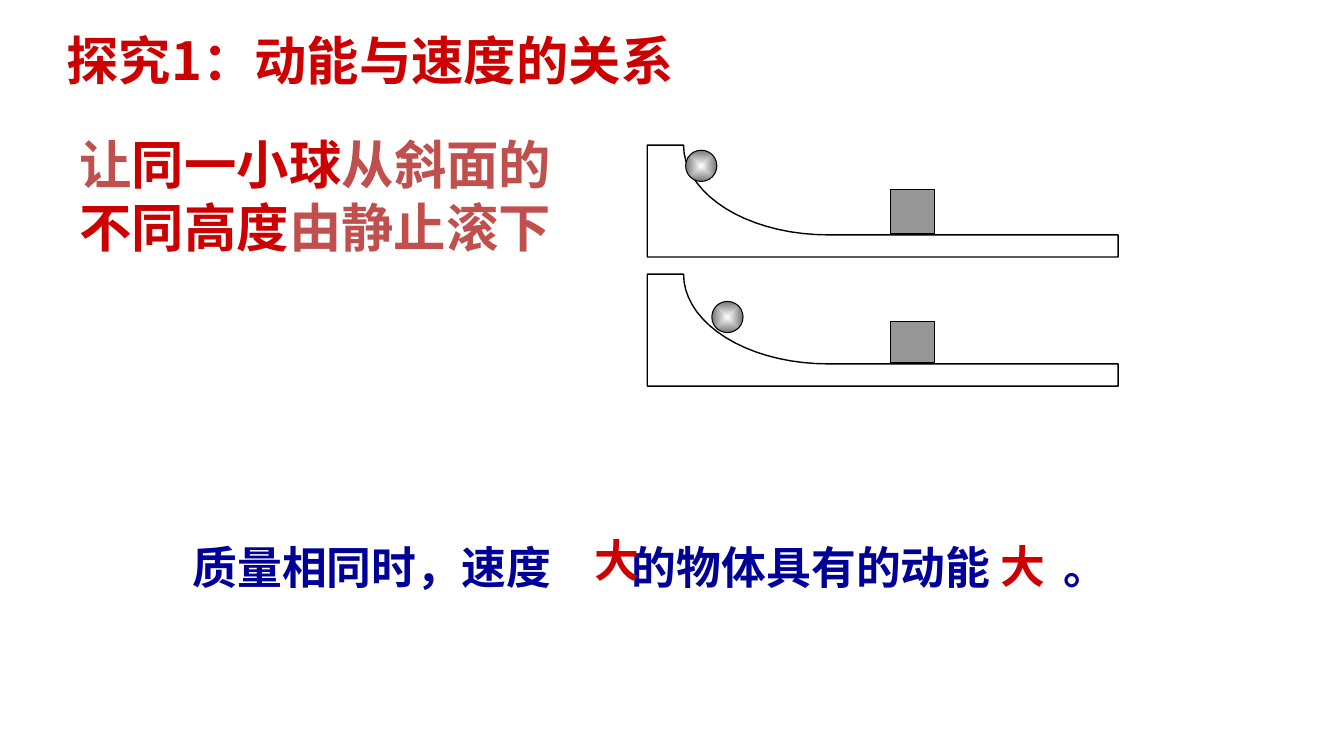
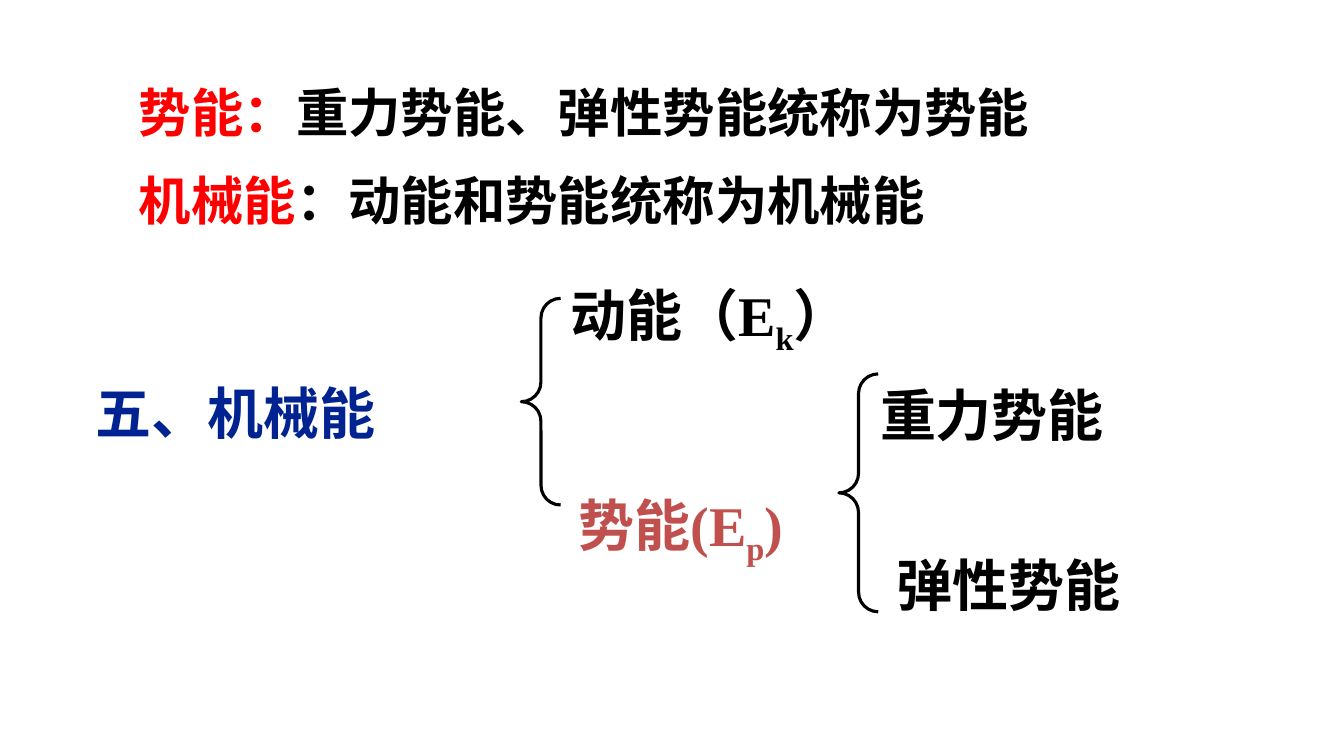
"""Builds two physics slides on kinetic, potential and mechanical energy."""
from math import cos, radians, sin

from lxml.etree import SubElement
from pptx import Presentation
from pptx.dml.color import RGBColor
from pptx.enum.shapes import MSO_SHAPE
from pptx.enum.text import MSO_AUTO_SIZE
from pptx.oxml.ns import qn
from pptx.util import Inches, Pt

BLACK = RGBColor(0x00, 0x00, 0x00)
WHITE = RGBColor(0xFF, 0xFF, 0xFF)
RED = RGBColor(0xCC, 0x00, 0x00)
BRIGHT_RED = RGBColor(0xFF, 0x00, 0x00)
BRICK = RGBColor(0xC0, 0x50, 0x4D)
NAVY = RGBColor(0x00, 0x00, 0x99)
DEEP_BLUE = RGBColor(0x00, 0x23, 0x91)
BLOCK_GRAY = RGBColor(0x96, 0x96, 0x96)
BALL_GRAY = RGBColor(0x75, 0x75, 0x75)
SANS = "Noto Sans CJK SC"
SERIF = "Times New Roman"


def write(slide, area, *paragraphs, size=40, font=SANS, spacing=None, tabs=()):
    """Add a bold text box; each paragraph is a list of (text, colour, style) runs."""
    box = slide.shapes.add_textbox(*map(Inches, area))
    frame = box.text_frame
    frame.word_wrap = True
    frame.auto_size = MSO_AUTO_SIZE.SHAPE_TO_FIT_TEXT
    for index, runs in enumerate(paragraphs):
        paragraph = frame.add_paragraph() if index else frame.paragraphs[0]
        if spacing:
            paragraph.line_spacing = spacing
        if tabs:
            stops = SubElement(paragraph._p.get_or_add_pPr(), qn("a:tabLst"))
            for stop in tabs:
                SubElement(stops, qn("a:tab"), pos=str(Inches(stop)), algn="l")
        for text, color, *style in runs:
            run = paragraph.add_run()
            run.text = text
            run.font.size = Pt(size)
            run.font.bold = True
            run.font.color.rgb = color
            run.font.name = font
            SubElement(run.font._element, qn("a:ea"), typeface=SANS)
            if "blank" in style:
                run.font.underline = True
            if "sub" in style:
                run.font._element.set("baseline", "-25000")


def outline(shape, width, fill=None):
    """Give a shape a black line, an optional plain fill and no shadow."""
    shape.shadow.inherit = False
    shape.line.color.rgb = BLACK
    shape.line.width = Pt(width)
    if fill is None:
        shape.fill.background()
    else:
        shape.fill.solid()
        shape.fill.fore_color.rgb = fill


prs = Presentation()
prs.slide_width = Inches(13.33)
prs.slide_height = Inches(7.5)
blank_layout = prs.slide_layouts[6]

speed_slide = prs.slides.add_slide(blank_layout)
curve = [(8.21 - 1.43 * cos(radians(a)), 0.89 * sin(radians(a))) for a in range(0, 91, 5)]
profile = curve + [(11.09, 0.89), (11.09, 1.11), (6.42, 1.11), (6.42, 0)]
for ramp_top, block_height, ball_left, ball_top in [
    (1.44, 0.44, 6.8, 1.49),
    (2.72, 0.41, 7.06, 2.99),
]:
    points = [(Inches(x), Inches(ramp_top + y)) for x, y in profile]
    builder = speed_slide.shapes.build_freeform(*points[0])
    builder.add_line_segments(points[1:], close=True)
    outline(builder.convert_to_shape(), 1, WHITE)

    block = speed_slide.shapes.add_shape(
        MSO_SHAPE.RECTANGLE, Inches(8.83), Inches(ramp_top + 0.88 - block_height),
        Inches(0.44), Inches(block_height))
    outline(block, 0.75, BLOCK_GRAY)

    ball = speed_slide.shapes.add_shape(
        MSO_SHAPE.OVAL, Inches(ball_left), Inches(ball_top), Inches(0.31), Inches(0.31))
    outline(ball, 0.75)
    ball.fill.gradient()
    for stop, color in zip(ball.fill.gradient_stops, (WHITE, BALL_GRAY)):
        stop.color.rgb = color
    gradient = ball._element.spPr.find(qn("a:gradFill"))
    gradient.remove(gradient.find(qn("a:lin")))
    radial = SubElement(gradient, qn("a:path"), path="shape")
    SubElement(radial, qn("a:fillToRect"), l="50000", t="50000", r="50000", b="50000")

write(speed_slide, (0.56, 0.23, 7.09, 0.73), [("探究1：动能与速度的关系", RED)], size=37.4)
write(speed_slide, (1.81, 5.31, 9.52, 0.64),
      [("质量相同时，速度", NAVY), ("\t", NAVY, "blank"), ("的物体具有的动能", NAVY),
       ("\t", NAVY, "blank"), ("。", NAVY)],
      size=32, tabs=(4.36, 8.64))
for answer_area in [(5.8, 5.24, 1.26, 0.64), (9.83, 5.3, 1.5, 0.64)]:
    write(speed_slide, answer_area, [("大", RED)], size=32)
write(speed_slide, (0.69, 1.26, 5.11, 1.36),
      [("让", BRICK), ("同一小球", RED), ("从斜面的", BRICK),
       ("不同高度", RED), ("由静止滚下", BRICK)],
      size=37.4)

energy_slide = prs.slides.add_slide(blank_layout)
write(energy_slide, (1.28, 0.5, 9.33, 1.86),
      [("势能：", BRIGHT_RED), ("重力势能、弹性势能统称为势能", BLACK)],
      [("机械能", BRIGHT_RED), ("：动能和势能统称为机械能", BLACK)],
      size=37.4, font="Arial", spacing=1.4)
write(energy_slide, (0.85, 3.71, 4.01, 0.77), [("五、机械能", DEEP_BLUE)])
write(energy_slide, (5.56, 2.73, 3.7, 0.77),
      [("动能（E", BLACK), ("k", BLACK, "sub"), ("）", BLACK)], font=SERIF)
write(energy_slide, (5.64, 4.06, 2.44, 2.79),
      [("势能(E", BRICK), ("p", BRICK, "sub"), (")", BRICK)], font=SERIF, spacing=2.0)
write(energy_slide, (8.63, 3.59, 2.67, 0.91), [("重力势能", BLACK)], font=SERIF, spacing=1.2)
write(energy_slide, (8.79, 5.28, 2.56, 0.91), [("弹性势能", BLACK)], font=SERIF, spacing=1.2)
for brace_area in [(8.32, 3.71, 0.39, 2.36), (5.17, 2.96, 0.39, 2.05)]:
    brace = energy_slide.shapes.add_shape(MSO_SHAPE.LEFT_BRACE, *map(Inches, brace_area))
    brace.adjustments[0] = 0.5
    outline(brace, 2.25)

prs.save("out.pptx")
